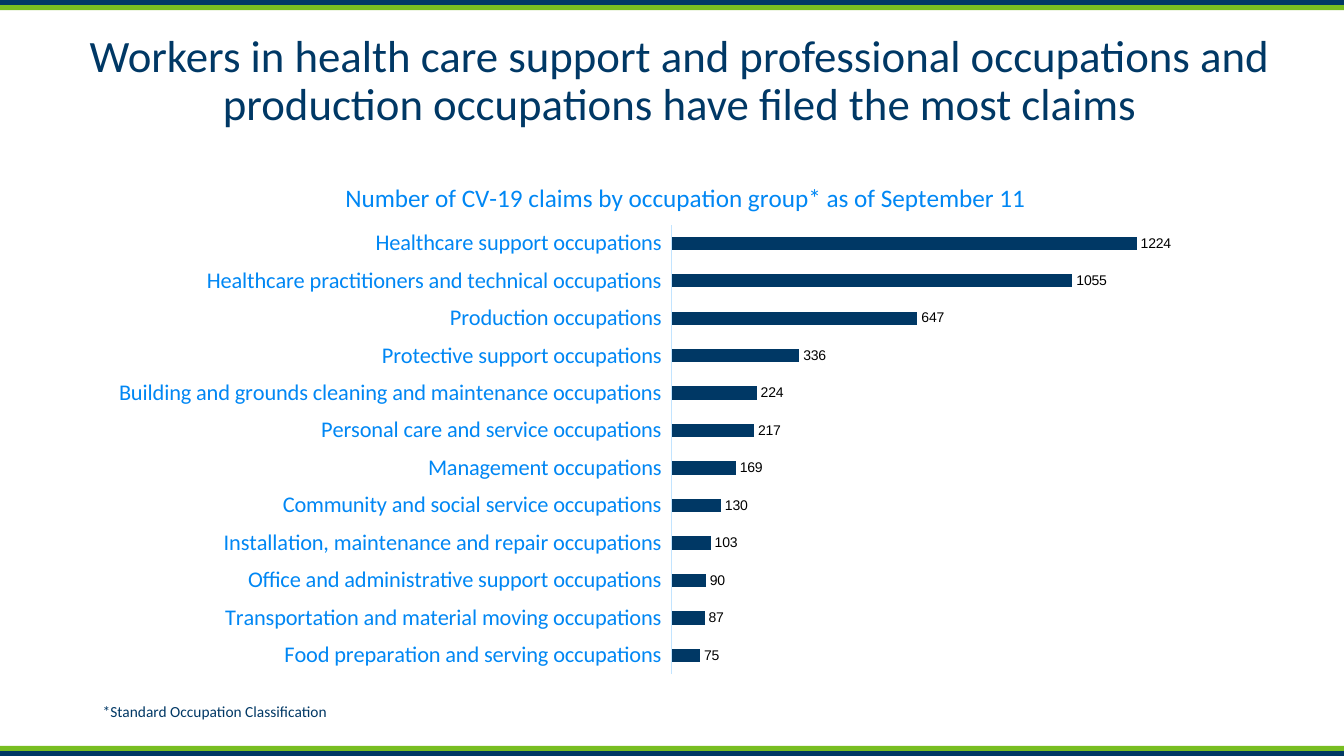
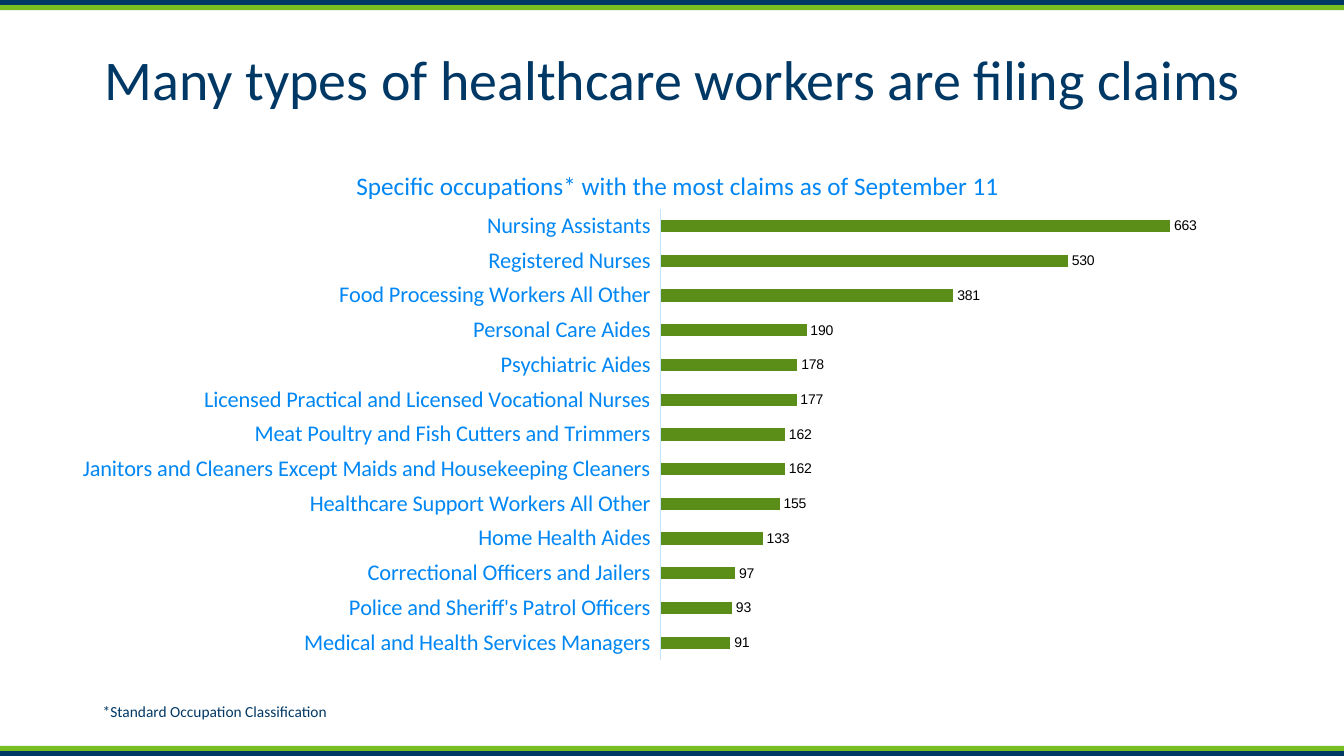
from lxml import etree
from pptx import Presentation
from pptx.chart.data import CategoryChartData
from pptx.dml.color import RGBColor
from pptx.enum.chart import XL_CHART_TYPE, XL_LABEL_POSITION, XL_TICK_LABEL_POSITION, XL_TICK_MARK
from pptx.enum.shapes import MSO_SHAPE
from pptx.enum.text import MSO_ANCHOR, PP_ALIGN
from pptx.oxml.ns import qn
from pptx.util import Inches, Pt

BAR = XL_CHART_TYPE.BAR_CLUSTERED
OUTSIDE_END = XL_LABEL_POSITION.OUTSIDE_END
LABELS_LOW = XL_TICK_LABEL_POSITION.LOW
NO_TICK = XL_TICK_MARK.NONE
RECTANGLE = MSO_SHAPE.RECTANGLE
TOP, MIDDLE = MSO_ANCHOR.TOP, MSO_ANCHOR.MIDDLE
LEFT, CENTER = PP_ALIGN.LEFT, PP_ALIGN.CENTER

WIDTH, HEIGHT, BAND = 13.33, 7.5, 0.05
COLORS = {"navy": "003865", "lime": "78BE21", "green": "5A8E19",
          "blue": "0087F4", "pale": "C2E4FF", "black": "000000"}
FOOTNOTE = "*Standard Occupation Classification"

# Rows run from the top of each chart to the bottom
OCCUPATION_GROUPS = [
    ("Healthcare support occupations", 1224),
    ("Healthcare practitioners and technical occupations", 1055),
    ("Production occupations", 647),
    ("Protective support occupations", 336),
    ("Building and grounds cleaning and maintenance occupations", 224),
    ("Personal care and service occupations", 217),
    ("Management occupations", 169),
    ("Community and social service occupations", 130),
    ("Installation, maintenance and repair occupations", 103),
    ("Office and administrative support occupations", 90),
    ("Transportation and material moving occupations", 87),
    ("Food preparation and serving occupations", 75),
]
SPECIFIC_OCCUPATIONS = [
    ("Nursing Assistants", 663),
    ("Registered Nurses", 530),
    ("Food Processing Workers All Other", 381),
    ("Personal Care Aides", 190),
    ("Psychiatric Aides", 178),
    ("Licensed Practical and Licensed Vocational Nurses", 177),
    ("Meat Poultry and Fish Cutters and Trimmers", 162),
    ("Janitors and Cleaners Except Maids and Housekeeping Cleaners", 162),
    ("Healthcare Support Workers All Other", 155),
    ("Home Health Aides", 133),
    ("Correctional Officers and Jailers", 97),
    ("Police and Sheriff's Patrol Officers", 93),
    ("Medical and Health Services Managers", 91),
]


def color(name):
    return RGBColor.from_string(COLORS[name])


def style_font(font, size, color_name, name="Calibri"):
    font.name, font.size, font.bold = name, Pt(size), False
    font.color.rgb = color(color_name)


def set_layout(parent, index, **settings):
    """Place a chart part by hand, in fractions of the chart."""
    for old in parent.findall(qn("c:layout")):
        parent.remove(old)
    layout = etree.Element(qn("c:layout"))
    manual = etree.SubElement(layout, qn("c:manualLayout"))
    for tag, value in settings.items():
        etree.SubElement(manual, qn("c:" + tag)).set("val", str(value))
    parent.insert(index, layout)


class ClaimsDeck:
    def __init__(self):
        self.deck = Presentation()
        self.deck.slide_width, self.deck.slide_height = Inches(WIDTH), Inches(HEIGHT)
        self.page = None

    def add_page(self):
        self.page = self.deck.slides.add_slide(self.deck.slide_layouts[6])
        for top, fill in ((HEIGHT - BAND, "navy"), (HEIGHT - 2 * BAND, "lime"),
                          (0, "navy"), (BAND, "lime")):
            self.band(top, fill)

    def band(self, top, fill):
        band = self.page.shapes.add_shape(RECTANGLE, 0, Inches(top), Inches(WIDTH), Inches(BAND))
        band.shadow.inherit = False
        band.fill.solid()
        band.fill.fore_color.rgb = color(fill)
        band.line.fill.background()

    def text(self, words, at, size, align=LEFT, anchor=TOP, spacing=1.0):
        box = self.page.shapes.add_textbox(*map(Inches, at))
        frame = box.text_frame
        frame.word_wrap = True
        frame.vertical_anchor = anchor
        para = frame.paragraphs[0]
        para.alignment, para.line_spacing = align, spacing
        span = para.add_run()
        span.text = words
        style_font(span.font, size, "navy")

    def title(self, words, left, width, size):
        self.text(words, (left, 0.4, width, 0.83), size, CENTER, MIDDLE, 0.9)

    def footnote(self, words):
        self.text(words, (0.92, 6.92, 3.84, 0.29), 11)

    def bar_chart(self, heading, rows, at, fill, maximum, plot, heading_at):
        data = CategoryChartData()
        data.categories = [label for label, _ in reversed(rows)]
        data.add_series("Series 1", [value for _, value in reversed(rows)])
        chart = self.page.shapes.add_chart(BAR, *map(Inches, at), data).chart
        style_font(chart.font, 10, "navy")
        chart.has_legend = False

        # Heading
        chart.has_title = True
        para = chart.chart_title.text_frame.paragraphs[0]
        span = para.add_run()
        span.text = heading
        style_font(span.font, 18, "blue")
        x, y = heading_at
        set_layout(chart.chart_title._element, 1, xMode="edge", yMode="edge", x=x, y=y)

        # Plot area and bars
        x, y, w, h = plot
        set_layout(chart._chartSpace.chart.plotArea, 0, layoutTarget="inner",
                   xMode="edge", yMode="edge", x=x, y=y, w=w, h=h)
        bars = chart.plots[0]
        bars.gap_width, bars.vary_by_categories = 182, False
        series_fill = bars.series[0].format.fill
        series_fill.solid()
        series_fill.fore_color.rgb = color(fill)
        bars.has_data_labels = True
        labels = bars.data_labels
        labels.show_value, labels.position = True, OUTSIDE_END
        style_font(labels.font, 10, "black", "Arial")

        # Axes
        values = chart.value_axis
        values.minimum_scale, values.maximum_scale = 0, maximum
        values.has_major_gridlines = values.visible = False
        groups = chart.category_axis
        groups.major_tick_mark = groups.minor_tick_mark = NO_TICK
        groups.tick_label_position = LABELS_LOW
        style_font(groups.tick_labels.font, 16, "blue")
        groups.format.line.color.rgb = color("pale")
        groups.format.line.width = Pt(0.75)


def main():
    claims = ClaimsDeck()

    # Claims by occupation group
    claims.add_page()
    claims.title("Workers in health care support and professional occupations and "
                 "production occupations have filed the most claims", 0.57, 12.35, 32)
    claims.footnote(FOOTNOTE)
    claims.bar_chart("Number of CV-19 claims by occupation group* as of September 11",
                     OCCUPATION_GROUPS, (0.74, 1.68, 11.68, 5.08), "navy", 1500,
                     plot=(0.507, 0.108, 0.484, 0.878), heading_at=(0.226, 0.013))

    # Claims by specific occupation
    claims.add_page()
    claims.title("Many types of healthcare workers are filing claims", 0.92, 11.5, 40)
    claims.footnote(FOOTNOTE)
    claims.bar_chart("Specific occupations* with the most claims as of September 11",
                     SPECIFIC_OCCUPATIONS, (0.34, 1.51, 12.6, 5.25), "green", 800,
                     plot=(0.493, 0.107, 0.484, 0.853), heading_at=(0.25, 0.022))

    claims.deck.save("out.pptx")


if __name__ == "__main__":
    main()
